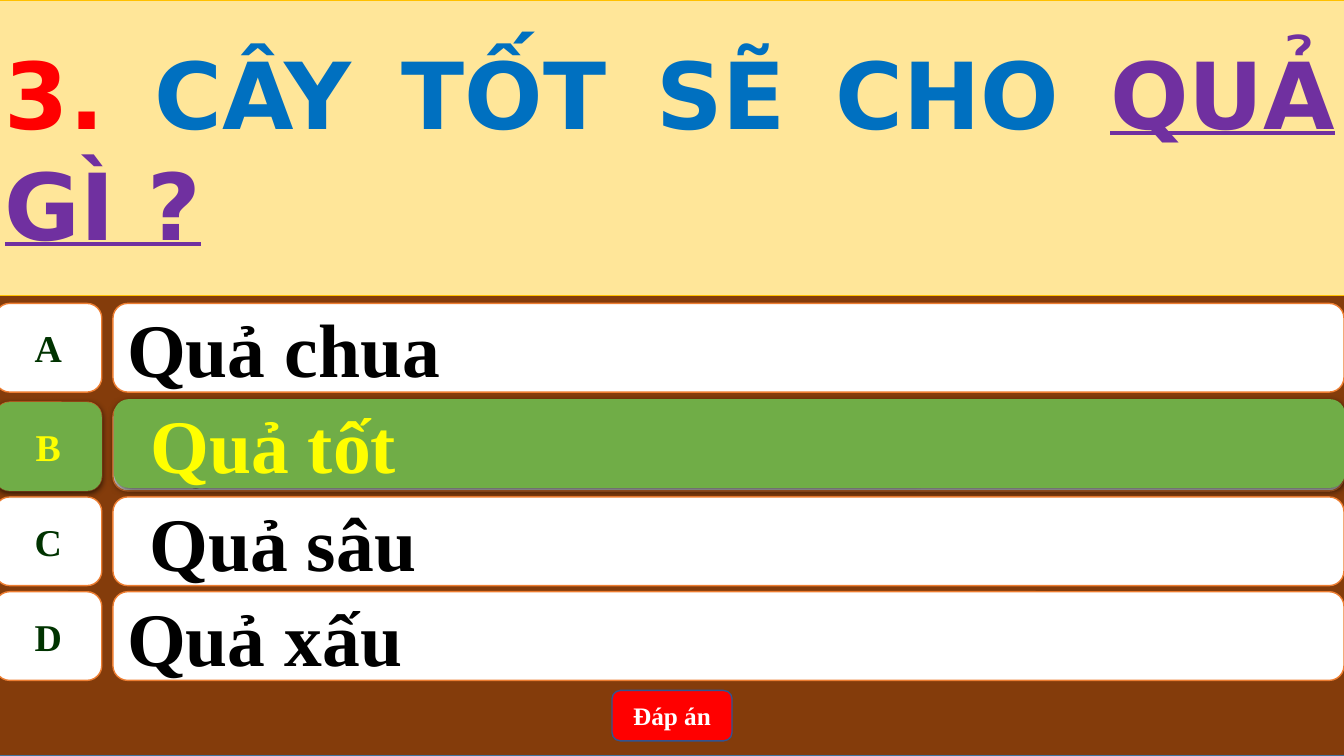
from dataclasses import dataclass

from lxml.etree import SubElement
from pptx import Presentation
from pptx.dml.color import RGBColor
from pptx.enum.shapes import MSO_SHAPE as Preset
from pptx.enum.text import MSO_ANCHOR as Anchor, PP_ALIGN as Align
from pptx.oxml.ns import qn
from pptx.util import Inches, Pt


@dataclass(frozen=True)
class Theme:
    board: str = "843C0B"
    board_edge: str = "43739E"
    banner: str = "FFE699"
    banner_edge: str = "FFC000"
    number: str = "FF0000"
    question: str = "0070C0"
    keyword: str = "7030A0"
    card: str = "FFFFFF"
    card_edge: str = "ED7D31"
    letter: str = "003300"
    answer: str = "000000"
    right_card: str = "70AD47"
    right_text: str = "FFFF00"
    button: str = "FF0000"
    button_edge: str = "325491"
    button_text: str = "FFFFFF"
    shadow: str = "000000"
    banner_font: str = "DejaVu Sans"
    body_font: str = "Times New Roman"
    banner_size: int = 66
    answer_size: int = 54
    letter_size: int = 27
    button_size: int = 18


THEME = Theme()
SLIDE_WIDTH, SLIDE_HEIGHT = 13.33, 7.5

# Columns are (left, width); rows are (top, height).
FULL_COLUMN = (-0.05, 13.39)
LETTER_COLUMN = (-0.05, 1.06)
ANSWER_COLUMN = (1.12, 12.21)
RIGHT_ANSWER_COLUMN = (1.13, 12.21)
BUTTON_COLUMN = (6.07, 1.19)
BOARD_ROW = (0, SLIDE_HEIGHT)
BANNER_ROW = (0, 2.93)
BUTTON_ROW = (6.85, 0.5)
CARD_HEIGHT = 0.88
ANSWER_ROWS = {"A": (3.01, CARD_HEIGHT), "B": (3.99, CARD_HEIGHT),
               "C": (4.93, CARD_HEIGHT), "D": (5.87, CARD_HEIGHT)}
RIGHT_ANSWER_ROW = (3.96, CARD_HEIGHT)

# Each entry is the answer and whether it is indented.
ANSWERS = {"A": ("Quả chua", False), "B": ("Quả tốt", True),
           "C": ("Quả sâu", True), "D": ("Quả xấu", False)}
RIGHT_LETTER = "B"


def add_panel(slide, preset, column, row, fill, edge=None, edge_width=1):
    (left, width), (top, height) = column, row
    panel = slide.shapes.add_shape(
        preset, Inches(left), Inches(top), Inches(width), Inches(height))
    panel.fill.solid()
    panel.fill.fore_color.rgb = RGBColor.from_string(fill)
    if edge:
        panel.line.color.rgb = RGBColor.from_string(edge)
        panel.line.width = Pt(edge_width)
    else:
        panel.line.fill.background()
    panel.shadow.inherit = False
    return panel


def cast_shadow(panel):
    effects = panel._element.spPr.find(qn("a:effectLst"))
    shadow = SubElement(effects, qn("a:outerShdw"), blurRad=str(Pt(4.5)),
                        dist=str(Pt(1.5)), dir="5400000", rotWithShape="0")
    color = SubElement(shadow, qn("a:srgbClr"), val=THEME.shadow)
    SubElement(color, qn("a:alpha"), val="63000")


def write(panel, *parts, size, font=THEME.body_font, align=Align.LEFT,
          wrap=True, indented=False):
    """Fill a panel with one bold paragraph of (text, color, underline) parts."""
    frame = panel.text_frame
    frame.word_wrap = wrap
    frame.vertical_anchor = Anchor.MIDDLE
    paragraph = frame.paragraphs[0]
    paragraph.alignment = align
    if indented:
        paragraph.level = 1
        properties = paragraph._p.get_or_add_pPr()
        properties.set("marL", str(Inches(0.5)))
        properties.set("indent", str(Inches(-0.28)))
    for text, color, underline in parts:
        run = paragraph.add_run()
        run.text = text
        run.font.name = font
        run.font.size = Pt(size)
        run.font.bold = True
        run.font.underline = underline
        run.font.color.rgb = RGBColor.from_string(color)


def add_letter(slide, letter, fill, color, edge=None):
    card = add_panel(slide, Preset.FLOWCHART_ALTERNATE_PROCESS,
                     LETTER_COLUMN, ANSWER_ROWS[letter], fill, edge)
    write(card, (letter, color, False), size=THEME.letter_size,
          align=Align.CENTER, wrap=False)
    return card


def add_answer(slide, letter, column, row, fill, color, edge=None):
    answer, indented = ANSWERS[letter]
    card = add_panel(slide, Preset.ROUNDED_RECTANGLE, column, row, fill, edge)
    write(card, (answer, color, False), size=THEME.answer_size,
          indented=indented)
    return card


def add_banner(slide):
    banner = add_panel(slide, Preset.RECTANGLE, FULL_COLUMN, BANNER_ROW,
                       THEME.banner, THEME.banner_edge, 0.5)
    write(banner, ("3. ", THEME.number, False),
          ("CÂY TỐT SẼ CHO ", THEME.question, False),
          ("QUẢ GÌ ?", THEME.keyword, True),
          size=THEME.banner_size, font=THEME.banner_font, align=Align.JUSTIFY)


def add_button(slide):
    button = add_panel(slide, Preset.ROUNDED_RECTANGLE, BUTTON_COLUMN,
                       BUTTON_ROW, THEME.button, THEME.button_edge)
    write(button, ("Đáp án", THEME.button_text, False),
          size=THEME.button_size, align=Align.CENTER)


def reveal_right_answer(slide):
    """Lay the green cards over the row of the right answer."""
    cast_shadow(add_answer(slide, RIGHT_LETTER, RIGHT_ANSWER_COLUMN,
                           RIGHT_ANSWER_ROW, THEME.right_card,
                           THEME.right_text))
    cast_shadow(add_letter(slide, RIGHT_LETTER, THEME.right_card,
                           THEME.right_text))


def main():
    deck = Presentation()
    deck.slide_width = Inches(SLIDE_WIDTH)
    deck.slide_height = Inches(SLIDE_HEIGHT)
    slide = deck.slides.add_slide(deck.slide_layouts[6])

    add_panel(slide, Preset.RECTANGLE, FULL_COLUMN, BOARD_ROW,
              THEME.board, THEME.board_edge)
    for letter, row in ANSWER_ROWS.items():
        add_letter(slide, letter, THEME.card, THEME.letter, THEME.card_edge)
        add_answer(slide, letter, ANSWER_COLUMN, row,
                   THEME.card, THEME.answer, THEME.card_edge)
    add_button(slide)
    add_banner(slide)
    reveal_right_answer(slide)
    deck.save("out.pptx")


if __name__ == "__main__":
    main()
